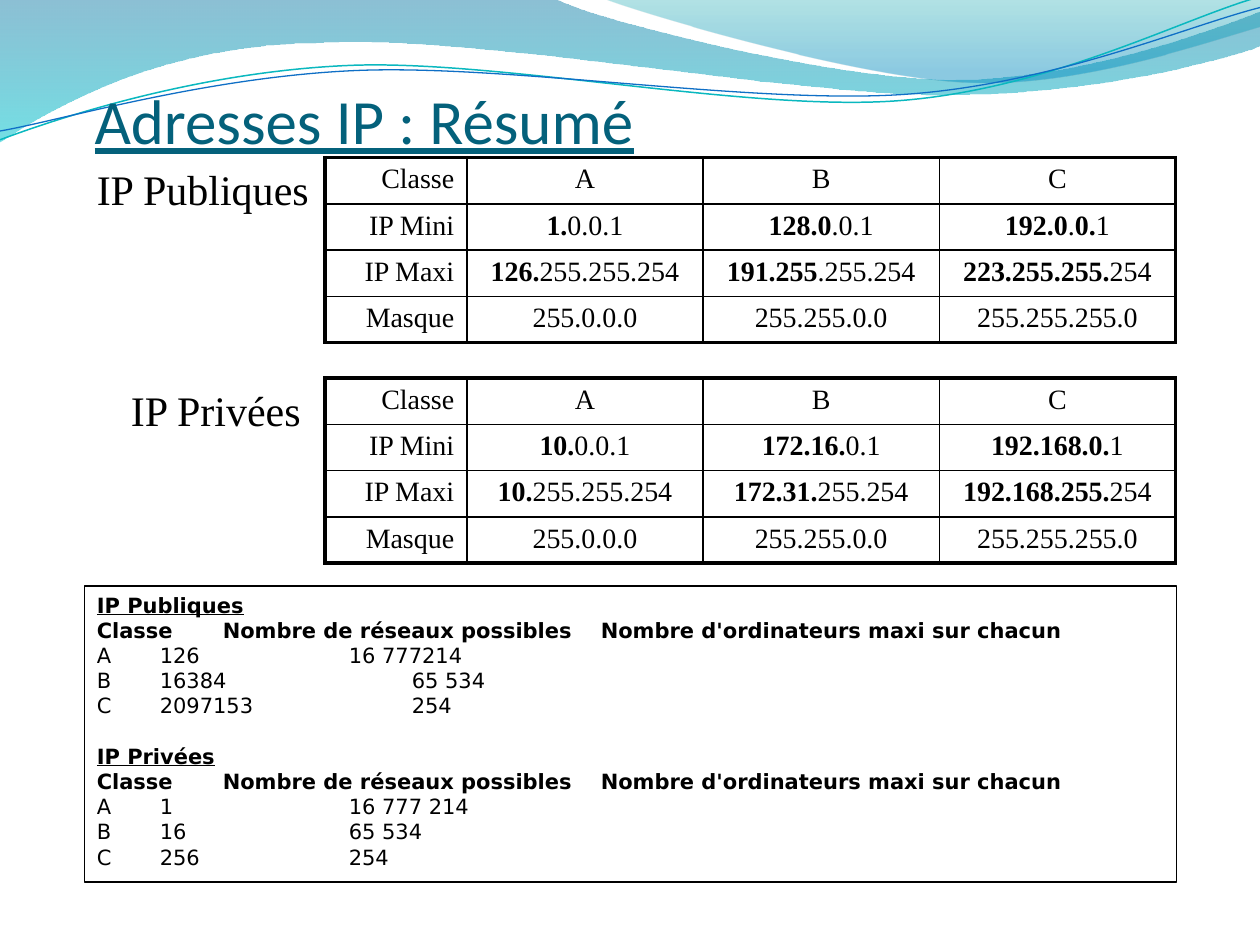
import dataclasses
import typing

import lxml.etree
import pptx
import pptx.dml.color
import pptx.enum.shapes
import pptx.enum.text
import pptx.oxml.ns
import pptx.util

Inches = pptx.util.Inches
Pt = pptx.util.Pt
Align = pptx.enum.text.PP_ALIGN
Anchor = pptx.enum.text.MSO_ANCHOR
qn = pptx.oxml.ns.qn

COLORS = {
    "ink": "000000", "title": "04617B", "deep": "0074A1", "cyan": "00C6CF",
    "teal": "00A1A9", "sky": "008BBF", "teal_line": "0AB8BF", "blue_line": "0F6FC6",
}
SERIF, SANS, HEADING = "Times New Roman", "DejaVu Sans", "Calibri"
TABLE_WIDTH, TABLE_HEIGHT = 6.75, 1.47
LABEL_COLUMN = TABLE_WIDTH / 6
Point = tuple[float, float]


class Stop(typing.NamedTuple):
    position: float
    color: str
    alpha: int


@dataclasses.dataclass
class Wave:
    """Each segment holds one point (straight) or three (Bézier)."""
    start: Point
    segments: list[tuple[Point, ...]]
    stops: tuple[Stop, ...] = ()
    line_color: str = ""
    line_width: float = 0


@dataclasses.dataclass
class AddressRange:
    label: str
    label_left: float
    label_width: float
    top: float
    minimums: list[str]
    maximums: list[str]
    counts: list[str]


# A "|" in an address switches bold on or off.
RANGES = [
    AddressRange("IP Publiques", 0.67, 1.9, 1.25,
                 ["|1.|0.0.1", "|128.0|.0.1", "|192.0|.|0.|1"],
                 ["|126.|255.255.254", "|191.255|.255.254", "|223.255.255.|254"],
                 ["A\t126\t\t\t16 777214", "B\t16384\t\t\t65 534", "C\t2097153\t\t\t254"]),
    AddressRange("IP Privées", 0.94, 1.56, 3,
                 ["|10.|0.0.1", "|172.16.|0.1", "|192.168.0.|1"],
                 ["|10.|255.255.254", "|172.31.|255.254", "|192.168.255.|254"],
                 ["A\t1\t\t\t16 777 214", "B\t16\t\t\t65 534", "C\t256\t\t\t254"]),
]
MASKS = ["255.0.0.0", "255.255.0.0", "255.255.255.0"]
COUNT_HEADER = "Classe\tNombre de réseaux possibles\tNombre d'ordinateurs maxi sur chacun"

WAVES = [
    Wave((0, -0.01), [
        ((4.4, -0.01),),
        ((4.76, 0.17), (6.64, 0.63), (7.58, 0.63)),
        ((8.53, 0.63), (9.58, 0.26), (10, 0.09)),
        ((10.01, 0.36),),
        ((9.83, 0.44), (8.7, 0.76), (7.46, 0.75)),
        ((6.22, 0.75), (3.82, 0.28), (2.57, 0.34)),
        ((1.29, 0.35), (0.46, 0.83), (-0.01, 1.13)),
    ], stops=(Stop(0, "deep", 45), Stop(1, "cyan", 55))),
    Wave((4.79, -0.01), [
        ((5.09, 0.11), (6.82, 0.62), (7.69, 0.65)),
        ((8.56, 0.69), (9.61, 0.32), (10, 0.21)),
        ((10, 0),),
    ], stops=(Stop(0, "teal", 30), Stop(0.8, "sky", 45))),
    Wave((0, 1.11), [
        ((0.48, 0.93), (1.58, 0.57), (2.77, 0.52)),
        ((3.95, 0.47), (5.93, 0.89), (7.13, 0.8)),
        ((8.33, 0.71), (9.38, 0.15), (9.98, -0.02)),
    ], line_color="teal_line", line_width=0.85),
    Wave((0, 1.04), [
        ((0.47, 0.96), (1.64, 0.61), (2.83, 0.56)),
        ((4.03, 0.51), (5.97, 0.83), (7.17, 0.75)),
        ((8.36, 0.67), (9.41, 0.21), (10, 0.06)),
    ], line_color="blue_line", line_width=0.75),
]


def rgb(name: str) -> pptx.dml.color.RGBColor:
    return pptx.dml.color.RGBColor.from_string(COLORS[name])


def write_text(paragraph, text: str, *, font: str, size: float, color: str = "ink",
               bold: bool = False, underline: bool = False, align=Align.LEFT) -> None:
    """Fill a paragraph, switching bold at each "|"."""
    paragraph.alignment = align
    for index, part in enumerate(text.split("|")):
        if part:
            run = paragraph.add_run()
            run.text = part
            run.font.name, run.font.size = font, Pt(size)
            run.font.bold = bold != bool(index % 2)
            run.font.underline = underline
            run.font.color.rgb = rgb(color)


def bend(shape, segments: list[tuple[Point, ...]]) -> None:
    """Join each three straight steps of a Bézier segment into one curve."""
    steps = iter(list(shape.element.iter(qn("a:lnTo"))))
    for segment in segments:
        group = [next(steps) for _ in segment]
        if len(group) == 3:
            curve = lxml.etree.Element(qn("a:cubicBezTo"))
            group[0].addprevious(curve)
            for step in group:
                curve.append(step[0])
                step.getparent().remove(step)


def draw_wave(slide, wave: Wave) -> None:
    builder = slide.shapes.build_freeform(Inches(wave.start[0]), Inches(wave.start[1]))
    builder.add_line_segments([(Inches(x), Inches(y)) for segment in wave.segments
                               for x, y in segment], close=bool(wave.stops))
    shape = builder.convert_to_shape()
    bend(shape, wave.segments)
    shape.shadow.inherit = False
    if not wave.stops:
        shape.fill.background()
        shape.line.color.rgb = rgb(wave.line_color)
        shape.line.width = Pt(wave.line_width)
        return
    shape.line.fill.background()
    shape.fill.gradient()
    shape.fill.gradient_angle = 270
    for target, stop in zip(shape.fill.gradient_stops, wave.stops):
        target.position = stop.position
        target.color.rgb = rgb(stop.color)
    for color, stop in zip(shape.element.spPr.iter(qn("a:srgbClr")), wave.stops):
        lxml.etree.SubElement(color, qn("a:alpha"), val=str(stop.alpha * 1000))


def set_border(cell, side: str, width: float) -> None:
    line = lxml.etree.SubElement(cell._tc.get_or_add_tcPr(), qn(f"a:ln{side}"), w=str(Pt(width)))
    fill = lxml.etree.SubElement(line, qn("a:solidFill"))
    lxml.etree.SubElement(fill, qn("a:srgbClr"), val=COLORS["ink"])


def draw_table(slide, addresses: AddressRange) -> None:
    rows = [["Classe", "A", "B", "C"], ["IP Mini", *addresses.minimums],
            ["IP Maxi", *addresses.maximums], ["Masque", *MASKS]]
    table = slide.shapes.add_table(4, 4, Inches(2.58), Inches(addresses.top),
                                   Inches(TABLE_WIDTH), Inches(TABLE_HEIGHT)).table
    table.first_row = table.horz_banding = False
    class_column = (TABLE_WIDTH - LABEL_COLUMN) / 3
    for c, column in enumerate(table.columns):
        column.width = Inches(class_column if c else LABEL_COLUMN)
    for r, row in enumerate(rows):
        for c, text in enumerate(row):
            cell = table.cell(r, c)
            write_text(cell.text_frame.paragraphs[0], text, font=SERIF, size=16,
                       align=Align.CENTER if c else Align.RIGHT)
            for side, outer in (("L", c == 0), ("R", c == 3), ("T", r == 0), ("B", r == 3)):
                set_border(cell, side, 2.25 if outer else 1)
            cell.fill.background()


def draw_label(slide, addresses: AddressRange) -> None:
    label = slide.shapes.add_textbox(Inches(addresses.label_left), Inches(addresses.top),
                                     Inches(addresses.label_width), Inches(0.5)).text_frame
    label.word_wrap = False
    write_text(label.paragraphs[0], addresses.label, font=SERIF, size=24)


def draw_counts(slide) -> None:
    box = slide.shapes.add_shape(pptx.enum.shapes.MSO_SHAPE.RECTANGLE, Inches(0.67),
                                 Inches(4.65), Inches(8.67), Inches(2.35))
    box.shadow.inherit = False
    box.fill.background()
    box.line.color.rgb = rgb("ink")
    box.line.width = Pt(0.75)
    frame = box.text_frame
    frame.word_wrap = True
    frame.vertical_anchor = Anchor.TOP
    for index, addresses in enumerate(RANGES):
        heading = frame.add_paragraph() if index else frame.paragraphs[0]
        heading.space_before = Pt(14.4 * index)
        write_text(heading, addresses.label, font=SANS, size=12, bold=True, underline=True)
        for text in (COUNT_HEADER, *addresses.counts):
            write_text(frame.add_paragraph(), text, font=SANS, size=12,
                       bold=text == COUNT_HEADER)


def draw_title(slide) -> None:
    """Place the title in front of the waves."""
    title = slide.shapes.title
    title.element.getparent().append(title.element)
    title.left, title.top, title.width, title.height = map(Inches, (0.75, 0.25, 8.5, 1))
    frame = title.text_frame
    frame.margin_left = frame.margin_right = frame.margin_bottom = 0
    frame.vertical_anchor = Anchor.BOTTOM
    frame.auto_size = pptx.enum.text.MSO_AUTO_SIZE.NONE
    write_text(frame.paragraphs[0], "Adresses IP : Résumé", font=HEADING, size=36,
               color="title", underline=True)


def main() -> None:
    deck = pptx.Presentation()
    deck.slide_width, deck.slide_height = Inches(10), Inches(7.5)
    slide = deck.slides.add_slide(deck.slide_layouts[5])
    for wave in WAVES:
        draw_wave(slide, wave)
    draw_title(slide)
    draw_counts(slide)
    for draw in (draw_table, draw_label):
        for addresses in RANGES:
            draw(slide, addresses)
    deck.save("out.pptx")


if __name__ == "__main__":
    main()
